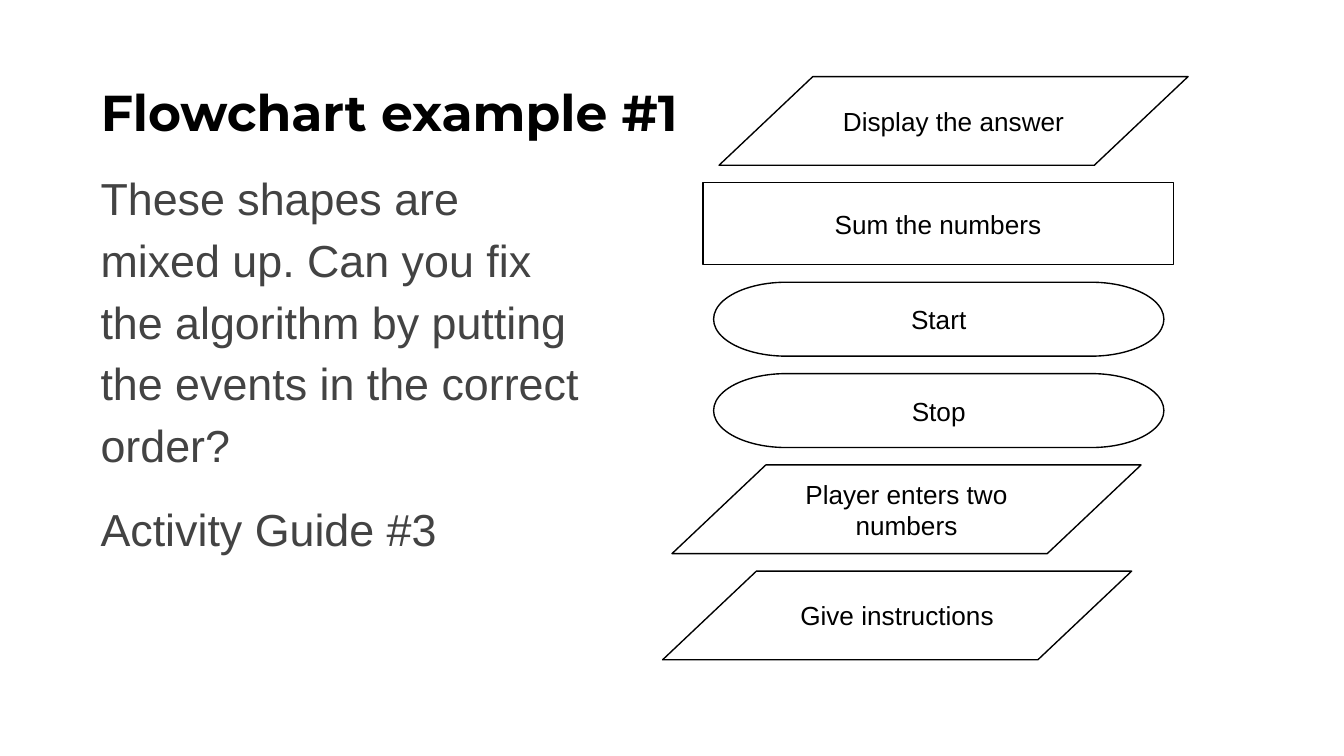
"""Build the slide of mixed-up flowchart steps."""
from pptx import Presentation
from pptx.dml.color import RGBColor
from pptx.enum.shapes import MSO_SHAPE
from pptx.enum.text import MSO_ANCHOR, MSO_AUTO_SIZE, PP_ALIGN
from pptx.util import Pt

BLACK = RGBColor(0, 0, 0)
GRAY = RGBColor(0x43, 0x43, 0x43)
GAP = 9.36


def write(shape, *lines, font="Arial", size=14, color=BLACK, bold=False,
          align=PP_ALIGN.LEFT, anchor=MSO_ANCHOR.MIDDLE, spacing=1, gap=0):
    frame = shape.text_frame
    frame.word_wrap = True
    frame.auto_size = MSO_AUTO_SIZE.NONE
    frame.vertical_anchor = anchor
    frame.margin_left = frame.margin_right = Pt(7.2)
    frame.margin_top = frame.margin_bottom = Pt(7.2)
    for i, line in enumerate(lines):
        para = frame.add_paragraph() if i else frame.paragraphs[0]
        para.alignment = align
        para.line_spacing = spacing
        para.space_before = Pt(gap if i else 0)
        run = para.add_run()
        run.text = line
        run.font.name = font
        run.font.size = Pt(size)
        run.font.bold = bold
        run.font.color.rgb = color


deck = Presentation()
deck.slide_width, deck.slide_height = Pt(720), Pt(405)
slide = deck.slides.add_slide(deck.slide_layouts[5])

title = slide.shapes.title
title.left, title.top = Pt(46.8), Pt(35.28)
title.width, title.height = Pt(324.72), Pt(48.96)
write(title, "Flowchart example #1", font="Montserrat", size=27, bold=True)

body = slide.shapes.add_textbox(Pt(46.8), Pt(79.92), Pt(276.48), Pt(241.2))
write(body,
      "These shapes are mixed up. Can you fix the algorithm by putting "
      "the events in the correct order?",
      "Activity Guide #3",
      size=24, color=GRAY, anchor=MSO_ANCHOR.TOP, spacing=1.15, gap=12)

DATA = (MSO_SHAPE.FLOWCHART_DATA, 251.28, 47.52)
STEP = (MSO_SHAPE.RECTANGLE, 252, 43.92)
END = (MSO_SHAPE.FLOWCHART_TERMINATOR, 241.2, 39.6)
events = [
    ("Display the answer", DATA, 385.2),
    ("Sum the numbers", STEP, 376.56),
    ("Start", END, 382.32),
    ("Stop", END, 382.32),
    ("Player enters two numbers", DATA, 360),
    ("Give instructions", DATA, 354.96),
]
top = 41.04
for label, (kind, width, height), left in events:
    event = slide.shapes.add_shape(kind, Pt(left), Pt(top), Pt(width), Pt(height))
    event.shadow.inherit = False
    event.fill.background()
    event.line.color.rgb = BLACK
    event.line.width = Pt(0.75)
    write(event, label, align=PP_ALIGN.CENTER)
    top += height + GAP

deck.save("out.pptx")
